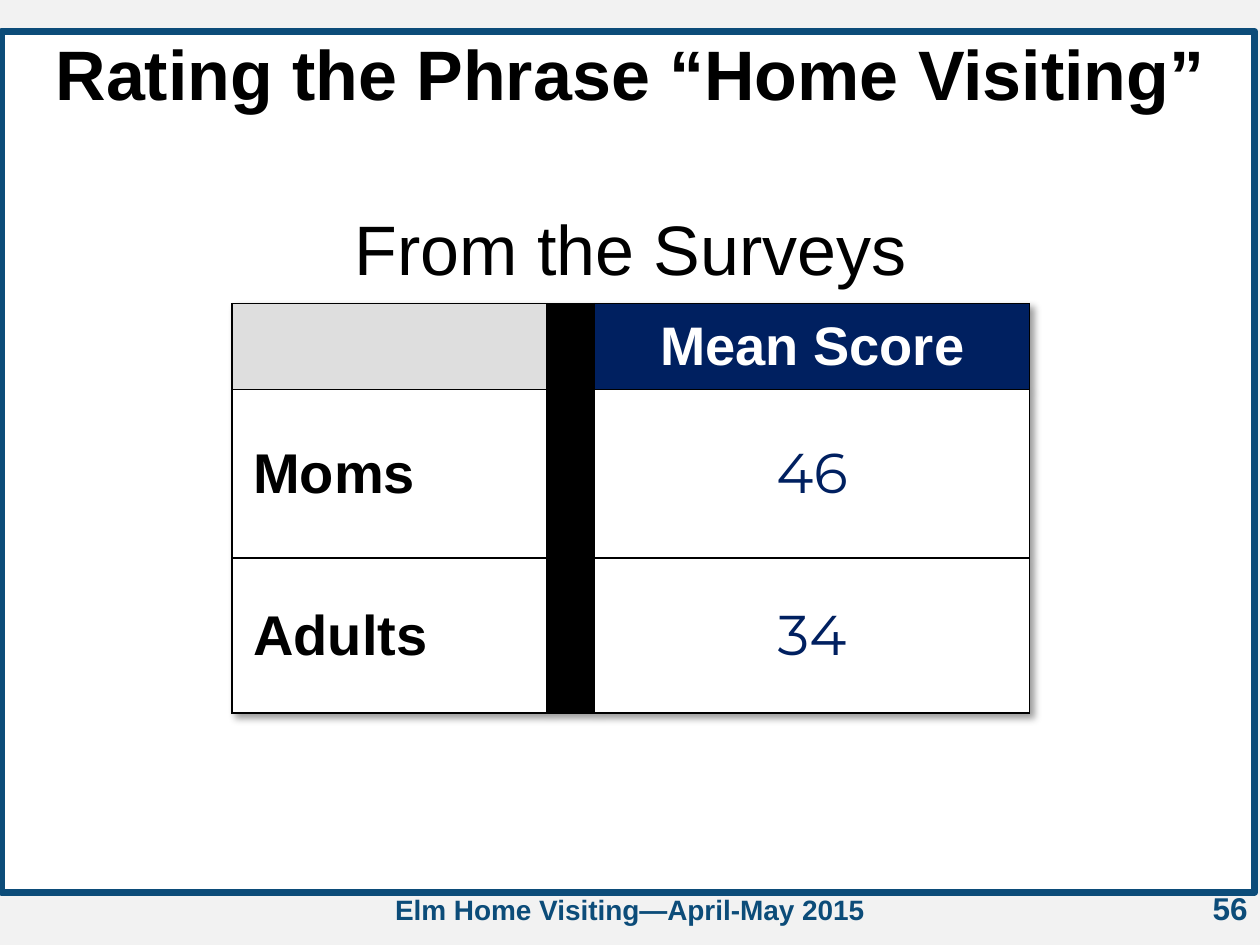
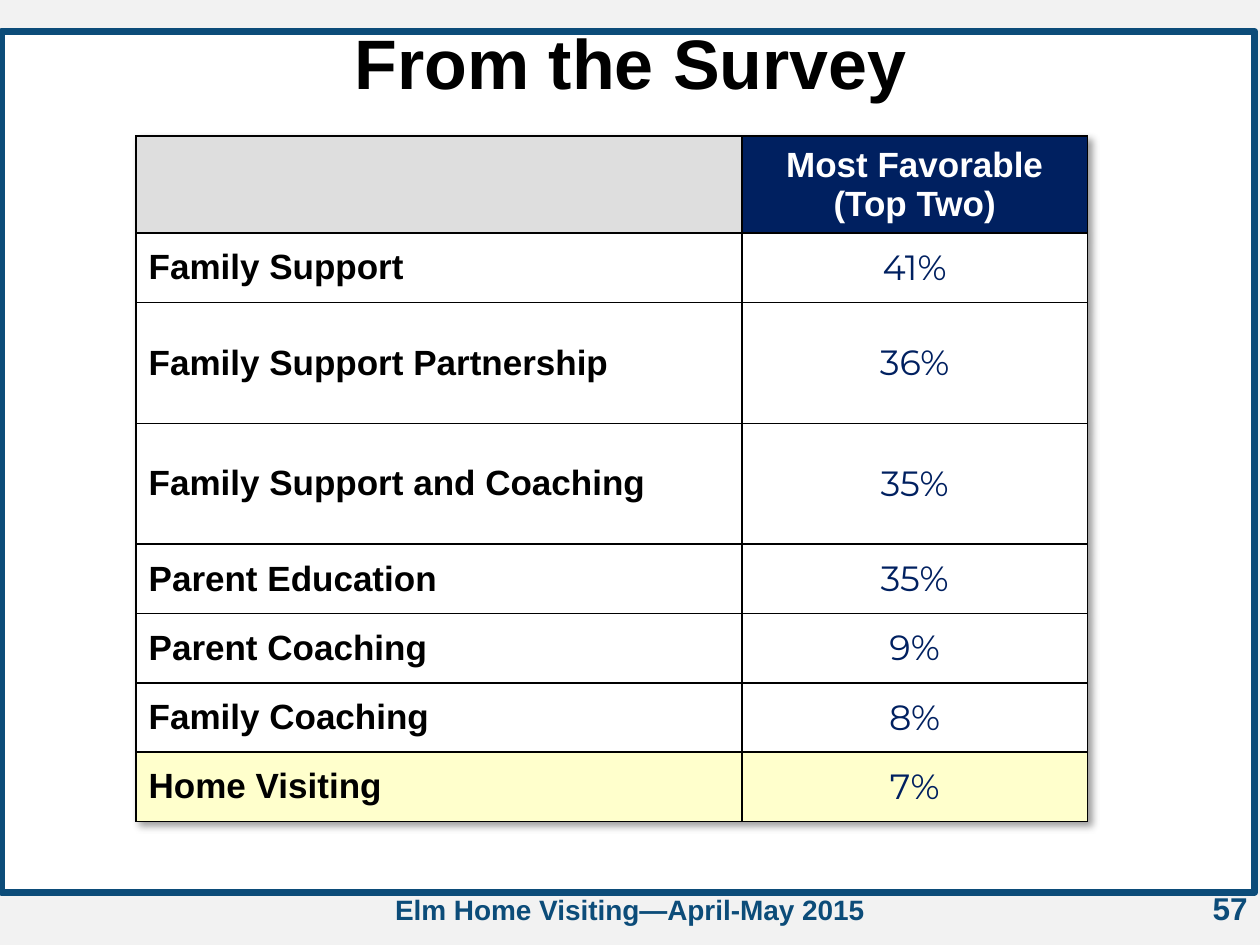
from dataclasses import dataclass
from typing import Optional

from lxml import etree
from pptx import Presentation
from pptx.dml.color import RGBColor
from pptx.enum.shapes import MSO_SHAPE as Preset
from pptx.enum.text import MSO_ANCHOR as Anchor, PP_ALIGN as Align
from pptx.oxml import parse_xml
from pptx.oxml.ns import nsdecls, qn
from pptx.util import Emu, Pt

# Shared look: 100 px to the inch
EMU_PER_PX = 9144
SLIDE_WIDTH, SLIDE_HEIGHT = 1000, 750
BACKDROP, FRAME_BLUE, NAVY = "F2F2F2", "0C4C79", "002060"
BLACK, WHITE, GREY, YELLOW = "000000", "FFFFFF", "DEDEDE", "FFFFCC"
TEXT_FONT, NUMBER_FONT = "Arial", "Montserrat"
FOOTER = "Elm Home Visiting—April-May 2015"
ALL_SIDES = "LRTB"


@dataclass(frozen=True)
class Box:
    left: int
    top: int
    width: int
    height: int


@dataclass(frozen=True)
class Style:
    size: int
    color: str = BLACK
    bold: bool = True
    font: str = TEXT_FONT
    align: Align = Align.CENTER


@dataclass(frozen=True)
class CellSpec:
    fill: Optional[str]
    text: str = ""
    style: Optional[Style] = None
    borders: str = ALL_SIDES


@dataclass(frozen=True)
class TableSpec:
    left: int
    top: int
    columns: list[int]
    rows: list[int]
    margin_x: int
    margin_y: int
    cells: list[list[CellSpec]]


@dataclass(frozen=True)
class SlideSpec:
    number: int
    title: str
    title_box: Box
    table: TableSpec


TITLE_STYLE = Style(40)
FOOTER_STYLE = Style(16, FRAME_BLUE)
NUMBER_STYLE = Style(18, FRAME_BLUE, align=Align.RIGHT)


def px(length: int) -> Emu:
    return Emu(length * EMU_PER_PX)


def rgb(color: str) -> RGBColor:
    return RGBColor.from_string(color)


def place(box: Box) -> tuple[Emu, Emu, Emu, Emu]:
    return px(box.left), px(box.top), px(box.width), px(box.height)


def paint(fill, color: str) -> None:
    fill.solid()
    fill.fore_color.rgb = rgb(color)


def write(text_frame, text: str, style: Style) -> None:
    paragraph = text_frame.paragraphs[0]
    paragraph.alignment = style.align
    run = paragraph.add_run()
    run.text = text
    run.font.name = style.font
    run.font.size = Pt(style.size)
    run.font.bold = style.bold
    run.font.color.rgb = rgb(style.color)


def add_text(slide, box: Box, text: str, style: Style, anchor=Anchor.TOP,
             margin_bottom: int = 5) -> None:
    text_frame = slide.shapes.add_textbox(*place(box)).text_frame
    text_frame.word_wrap = True
    text_frame.vertical_anchor = anchor
    text_frame.margin_bottom = px(margin_bottom)
    write(text_frame, text, style)


def add_frame(slide) -> None:
    frame = slide.shapes.add_shape(Preset.ROUNDED_RECTANGLE, *place(Box(1, 25, 995, 683)))
    frame.adjustments[0] = 0
    frame.shadow.inherit = False
    paint(frame.fill, WHITE)
    frame.line.color.rgb = rgb(FRAME_BLUE)
    frame.line.width = Pt(4)


# Tables
def set_borders(cell, sides: str) -> None:
    properties = cell._tc.get_or_add_tcPr()
    for position, side in enumerate(ALL_SIDES):
        line = etree.Element(qn(f"a:ln{side}"), w=str(Pt(1)))
        if side in sides:
            fill = etree.SubElement(line, qn("a:solidFill"))
            etree.SubElement(fill, qn("a:srgbClr"), val=BLACK)
        else:
            etree.SubElement(line, qn("a:noFill"))
        properties.insert(position, line)


def add_table_shadow(table) -> None:
    table._tbl.tblPr.insert(0, parse_xml(
        f'<a:effectLst {nsdecls("a")}><a:outerShdw blurRad="50800" dist="38100" '
        'dir="2700000" algn="tl" rotWithShape="0"><a:srgbClr val="000000">'
        '<a:alpha val="40000"/></a:srgbClr></a:outerShdw></a:effectLst>'))


def fill_cell(cell, spec: CellSpec, margin_x: int, margin_y: int) -> None:
    cell.margin_left = cell.margin_right = px(margin_x)
    cell.margin_top = cell.margin_bottom = px(margin_y)
    cell.vertical_anchor = Anchor.MIDDLE
    if spec.fill:
        paint(cell.fill, spec.fill)
    else:
        cell.fill.background()
    set_borders(cell, spec.borders)
    if spec.style:
        write(cell.text_frame, spec.text, spec.style)


def add_table(slide, spec: TableSpec):
    box = Box(spec.left, spec.top, sum(spec.columns), sum(spec.rows))
    table = slide.shapes.add_table(len(spec.rows), len(spec.columns), *place(box)).table
    table.first_row = table.horz_banding = False
    add_table_shadow(table)
    for column, width in zip(table.columns, spec.columns):
        column.width = px(width)
    for row, height, cell_specs in zip(table.rows, spec.rows, spec.cells):
        row.height = px(height)
        for cell, cell_spec in zip(row.cells, cell_specs):
            fill_cell(cell, cell_spec, spec.margin_x, spec.margin_y)
    # A row with one heading spans the full width
    for index, cell_specs in enumerate(spec.cells):
        if cell_specs[0].fill is None:
            table.cell(index, 0).merge(table.cell(index, len(spec.columns) - 1))
    return table


def label(text: str, size: int, fill: str = WHITE) -> CellSpec:
    return CellSpec(fill, text, Style(size, align=Align.LEFT))


def score(text: str, size: int, fill: str = WHITE) -> CellSpec:
    return CellSpec(fill, text, Style(size, NAVY, False, NUMBER_FONT))


def heading(text: str, size: int) -> CellSpec:
    return CellSpec(NAVY, text, Style(size, WHITE))


# Contents
CORNER, DIVIDER = CellSpec(GREY), CellSpec(BLACK)
SPANNED = CellSpec(None, borders="B")
MEAN_SCORES = [("Moms", "46"), ("Adults", "34")]
FAVORABLE_SHARES = [
    ("Family Support", "41%", WHITE),
    ("Family Support Partnership", "36%", WHITE),
    ("Family Support and Coaching", "35%", WHITE),
    ("Parent Education", "35%", WHITE),
    ("Parent Coaching", "9%", WHITE),
    ("Family Coaching", "8%", WHITE),
    ("Home Visiting", "7%", YELLOW),
]

MEAN_TABLE = TableSpec(
    184, 158, [250, 38, 345], [83, 68, 134, 123], 17, 8,
    [[CellSpec(None, "From the Surveys", Style(40, bold=False), "B"), SPANNED, SPANNED],
     [CORNER, DIVIDER, heading("Mean Score", 31)]]
    + [[label(group, 32), DIVIDER, score(mean, 32)] for group, mean in MEAN_SCORES])

FAVORABLE_TABLE = TableSpec(
    108, 108, [481, 274], [77, 55, 96, 96] + [55] * 4, 10, 5,
    [[CORNER, heading("Most Favorable (Top Two)", 20)]]
    + [[label(phrase, 20, fill), score(share, 20, fill)]
       for phrase, share, fill in FAVORABLE_SHARES])

SLIDES = [
    SlideSpec(56, "Rating the Phrase “Home Visiting”", Box(29, 17, 942, 77), MEAN_TABLE),
    SlideSpec(57, "From the Survey", Box(42, 8, 917, 77), FAVORABLE_TABLE),
]


def add_slide(presentation, spec: SlideSpec) -> None:
    slide = presentation.slides.add_slide(presentation.slide_layouts[6])
    paint(slide.background.fill, BACKDROP)
    add_frame(slide)
    add_text(slide, Box(767, 701, 233, 52), str(spec.number), NUMBER_STYLE)
    add_text(slide, Box(253, 703, 494, 37), FOOTER, FOOTER_STYLE, Anchor.MIDDLE)
    add_text(slide, spec.title_box, spec.title, TITLE_STYLE, Anchor.BOTTOM, 3)
    add_table(slide, spec.table)


def main() -> None:
    presentation = Presentation()
    presentation.slide_width, presentation.slide_height = px(SLIDE_WIDTH), px(SLIDE_HEIGHT)
    for spec in SLIDES:
        add_slide(presentation, spec)
    presentation.save("out.pptx")


if __name__ == "__main__":
    main()
